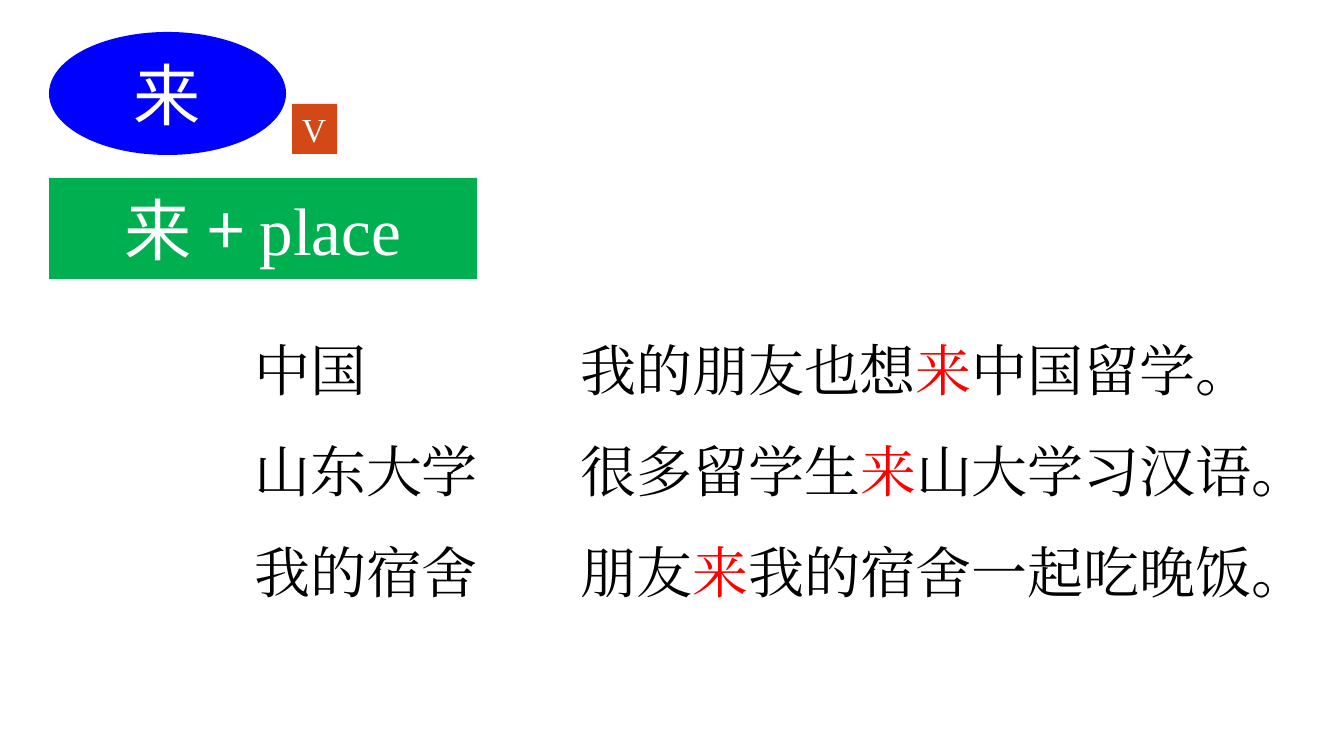
from lxml import etree
from pptx import Presentation
from pptx import util as u
from pptx.dml.color import RGBColor
from pptx.enum import shapes, text
from pptx.oxml.ns import qn

SCALE = 914400 / 100.8
COLORS = {
    "white": "FFFFFF",
    "black": "000000",
    "red": "FF0000",
    "blue": "0000FF",
    "green": "00B050",
    "rust": "D34817",
}
SERIF = "Times New Roman"
HAN = "Noto Sans CJK SC"


class Board:
    def __init__(self, deck):
        self.slide = deck.slides.add_slide(deck.slide_layouts[3])

    def color(self, name):
        return RGBColor.from_string(COLORS[name])

    def move(self, item, box):
        for side, size in zip(("left", "top", "width", "height"), box):
            setattr(item, side, u.Emu(round(size * SCALE)))

    def format(self, item, **values):
        for name, value in values.items():
            setattr(item, name, value)

    def run(self, para, words, size, face, ink):
        run = para.add_run()
        run.text = words
        self.format(run.font, size=u.Pt(size), name=face)
        run.font.color.rgb = self.color(ink)
        etree.SubElement(run.font._element, qn("a:ea"), typeface=face)

    def shape(self, kind, box, fill):
        item = self.slide.shapes.add_shape(kind, 0, 0, 0, 0)
        self.move(item, box)
        item.shadow.inherit = False
        item.fill.solid()
        item.fill.fore_color.rgb = self.color(fill)
        item.line.fill.background()
        return item

    def label(self, item, runs, size, align, wrap=True):
        frame = item.text_frame
        self.format(frame, word_wrap=wrap, auto_size=text.MSO_AUTO_SIZE.NONE,
                    vertical_anchor=text.MSO_ANCHOR.MIDDLE)
        para = frame.paragraphs[0]
        para.alignment = align
        for words, face in runs:
            self.run(para, words, size, face, "white")

    def title(self, box, words):
        item = self.slide.shapes.title
        self.move(item, box)
        self.label(item, [(words, HAN)], 48, text.PP_ALIGN.CENTER)

    def list(self, index, box, lines, key):
        item = self.slide.placeholders[index]
        self.move(item, box)
        frame = item.text_frame
        self.format(frame, word_wrap=True, auto_size=text.MSO_AUTO_SIZE.NONE,
                    vertical_anchor=text.MSO_ANCHOR.TOP)
        for row, line in enumerate(lines):
            para = frame.add_paragraph() if row else frame.paragraphs[0]
            props = para._p.get_or_add_pPr()
            for name in ("marL", "indent"):
                props.set(name, "0")
            etree.SubElement(props, qn("a:buNone"))
            self.format(para, line_spacing=1.5, space_before=u.Pt(0),
                        space_after=u.Pt(0), alignment=text.PP_ALIGN.LEFT)
            for part in line.partition(key):
                if part:
                    ink = "red" if part == key else "black"
                    self.run(para, part, 40, SERIF, ink)


def main():
    deck = Presentation()
    deck.slide_width = u.Inches(13.33)
    deck.slide_height = u.Inches(7.5)
    board = Board(deck)
    kinds = shapes.MSO_SHAPE
    word = "来"

    oval = (49, 32, 237, 123)
    back = board.shape(kinds.OVAL, oval, "blue")
    title = board.slide.shapes.title
    title._element.addprevious(back._element)
    board.title(oval, word)

    board.list(1, (244, 297, 585, 515), ["中国", "山东大学", "我的宿舍"], word)
    rule = board.shape(kinds.RECTANGLE, (49, 178, 428, 101), "green")
    board.label(rule, [(word + " + ", HAN), ("place", SERIF)], 48,
                text.PP_ALIGN.CENTER)
    board.list(2, (570, 297, 724, 302), [
        "我的朋友也想来中国留学。",
        "很多留学生来山大学习汉语。",
        "朋友来我的宿舍一起吃晚饭。",
    ], word)
    tag = board.shape(kinds.RECTANGLE, (292, 104, 45, 50), "rust")
    board.label(tag, [("V", SERIF)], 24, text.PP_ALIGN.LEFT, False)
    deck.save("out.pptx")


if __name__ == "__main__":
    main()
